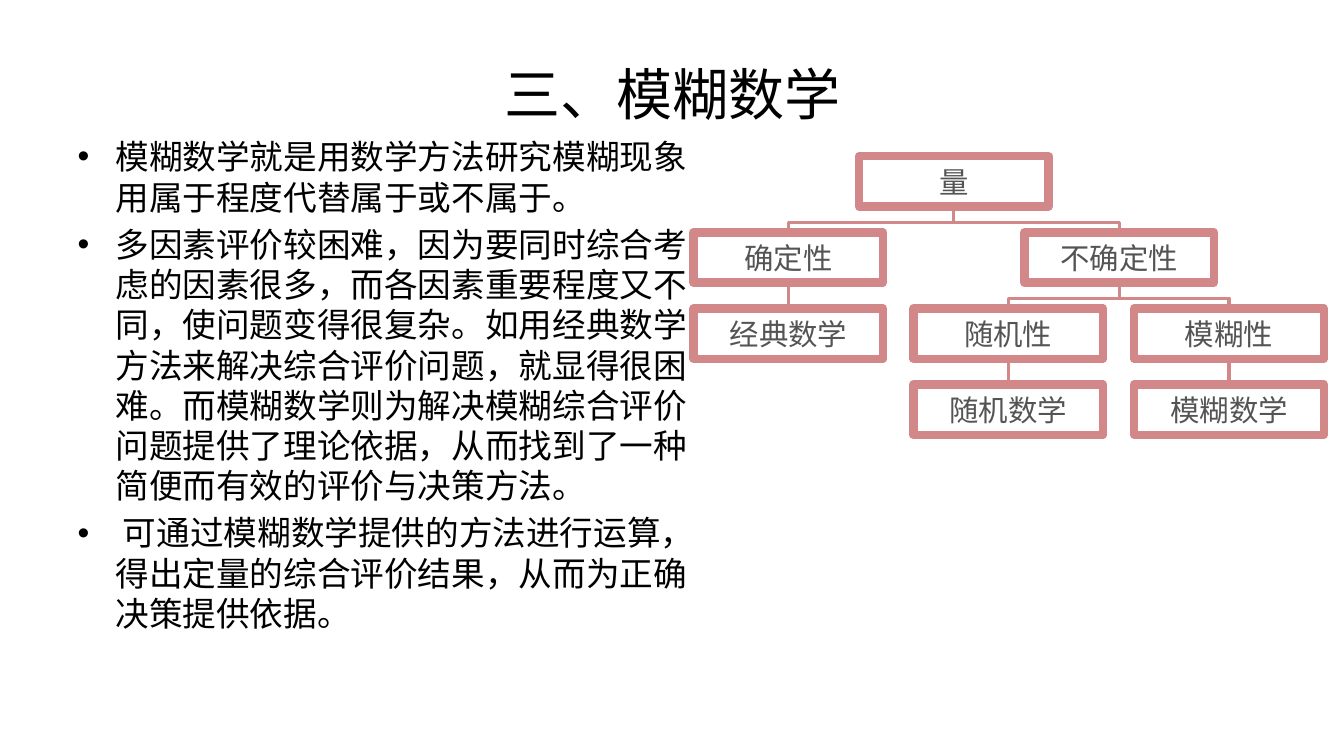
"""Build a slide on fuzzy mathematics with a bullet list and a tree of quantities."""
from lxml import etree
from pptx import Presentation
from pptx.dml.color import RGBColor
from pptx.enum import shapes, text
from pptx.oxml.ns import qn
from pptx.util import Inches, Pt

TITLE = "三、模糊数学"
BULLETS = [
    "模糊数学就是用数学方法研究模糊现象用属于程度代替属于或不属于。",
    "多因素评价较困难，因为要同时综合考虑的因素很多，而各因素重要程度又不同，"
    "使问题变得很复杂。如用经典数学方法来解决综合评价问题，就显得很困难。"
    "而模糊数学则为解决模糊综合评价问题提供了理论依据，从而找到了一种简便而有效的评价与决策方法。",
    " 可通过模糊数学提供的方法进行运算，得出定量的综合评价结果，从而为正确决策提供依据。",
]
# (label, parent label, level, left)
NODES = [
    ("量", None, 0, 8.52),
    ("确定性", "量", 1, 6.88),
    ("不确定性", "量", 1, 10.16),
    ("经典数学", "确定性", 2, 6.88),
    ("随机性", "不确定性", 2, 9.06),
    ("模糊性", "不确定性", 2, 11.25),
    ("随机数学", "随机性", 3, 9.06),
    ("模糊数学", "模糊性", 3, 11.25),
]
COLORS = {"ink": "000000", "label": "545454", "line": "D28888", "box": "FFFFFF"}
TREE_TOP, LEVEL_STEP = 1.55, 0.755
BOX_WIDTH, BOX_HEIGHT = 1.88, 0.5
DROP = LEVEL_STEP - BOX_HEIGHT


def color(name):
    return RGBColor.from_string(COLORS[name])


def add_run(paragraph, words, size, font_name, color_name):
    run = paragraph.add_run()
    run.text = words
    run.font.size = Pt(size)
    run.font.name = font_name
    run.font.color.rgb = color(color_name)


def place(shape, left, top, width, height):
    shape.left, shape.top = Inches(left), Inches(top)
    shape.width, shape.height = Inches(width), Inches(height)


def add_box(slide, label, level, left):
    box = slide.shapes.add_shape(
        shapes.MSO_SHAPE.RECTANGLE, Inches(left), Inches(TREE_TOP + level * LEVEL_STEP),
        Inches(BOX_WIDTH), Inches(BOX_HEIGHT))
    box.shadow.inherit = False
    box.fill.solid()
    box.fill.fore_color.rgb = color("box")
    box.line.color.rgb = color("line")
    box.line.width = Pt(6)
    frame = box.text_frame
    frame.margin_top = frame.margin_bottom = 0
    frame.vertical_anchor = text.MSO_ANCHOR.MIDDLE
    paragraph = frame.paragraphs[0]
    paragraph.alignment = text.PP_ALIGN.CENTER
    add_run(paragraph, label, 21, "Arial", "label")
    return box


def add_branch(slide, child, parent):
    child_x = child.left + child.width // 2
    parent_x = parent.left + parent.width // 2
    parent_bottom = parent.top + parent.height
    if child_x == parent_x:
        branch = slide.shapes.add_connector(
            shapes.MSO_CONNECTOR.STRAIGHT, child_x, child.top, parent_x, parent_bottom)
        branch.begin_connect(child, 0)
        branch.end_connect(parent, 2)
    else:
        drop, run = Inches(DROP), abs(child_x - parent_x)
        left = (child_x + parent_x - drop) // 2
        top = (child.top + parent_bottom - run) // 2
        branch = slide.shapes.add_connector(
            shapes.MSO_CONNECTOR.ELBOW, left, top, left + drop, top + run)
        transform = branch._element.spPr.find(qn("a:xfrm"))
        if child_x < parent_x:
            transform.set("rot", str(270 * 60000))
        else:
            transform.set("rot", str(90 * 60000))
            transform.set("flipH", "1")
        guides = branch._element.spPr.find(qn("a:prstGeom")).find(qn("a:avLst"))
        etree.SubElement(guides, qn("a:gd"), name="adj1", fmla="val 40000")
    branch.line.color.rgb = color("line")
    branch.line.width = Pt(2.25)
    etree.SubElement(branch._element.spPr, qn("a:effectLst"))


def main():
    presentation = Presentation()
    presentation.slide_width, presentation.slide_height = Inches(13.33), Inches(7.5)
    slide = presentation.slides.add_slide(presentation.slide_layouts[1])

    title = slide.shapes.title
    place(title, 0.67, 0.3, 12, 1.25)
    title.text_frame.vertical_anchor = text.MSO_ANCHOR.MIDDLE
    heading = title.text_frame.paragraphs[0]
    heading.alignment = text.PP_ALIGN.CENTER
    add_run(heading, TITLE, 40, "Noto Sans CJK SC", "ink")

    body = slide.placeholders[1]
    place(body, 0.67, 1.3, 6.29, 5.15)
    frame = body.text_frame
    frame.auto_size = text.MSO_AUTO_SIZE.NONE
    for index, words in enumerate(BULLETS):
        paragraph = frame.add_paragraph() if index else frame.paragraphs[0]
        paragraph.space_before = Pt(4.8 if index else 0)
        add_run(paragraph, words, 24, "Arial", "ink")

    boxes = {}
    for label, parent, level, left in NODES:
        boxes[label] = add_box(slide, label, level, left)
        if parent:
            add_branch(slide, boxes[label], boxes[parent])
    presentation.save("out.pptx")


if __name__ == "__main__":
    main()
